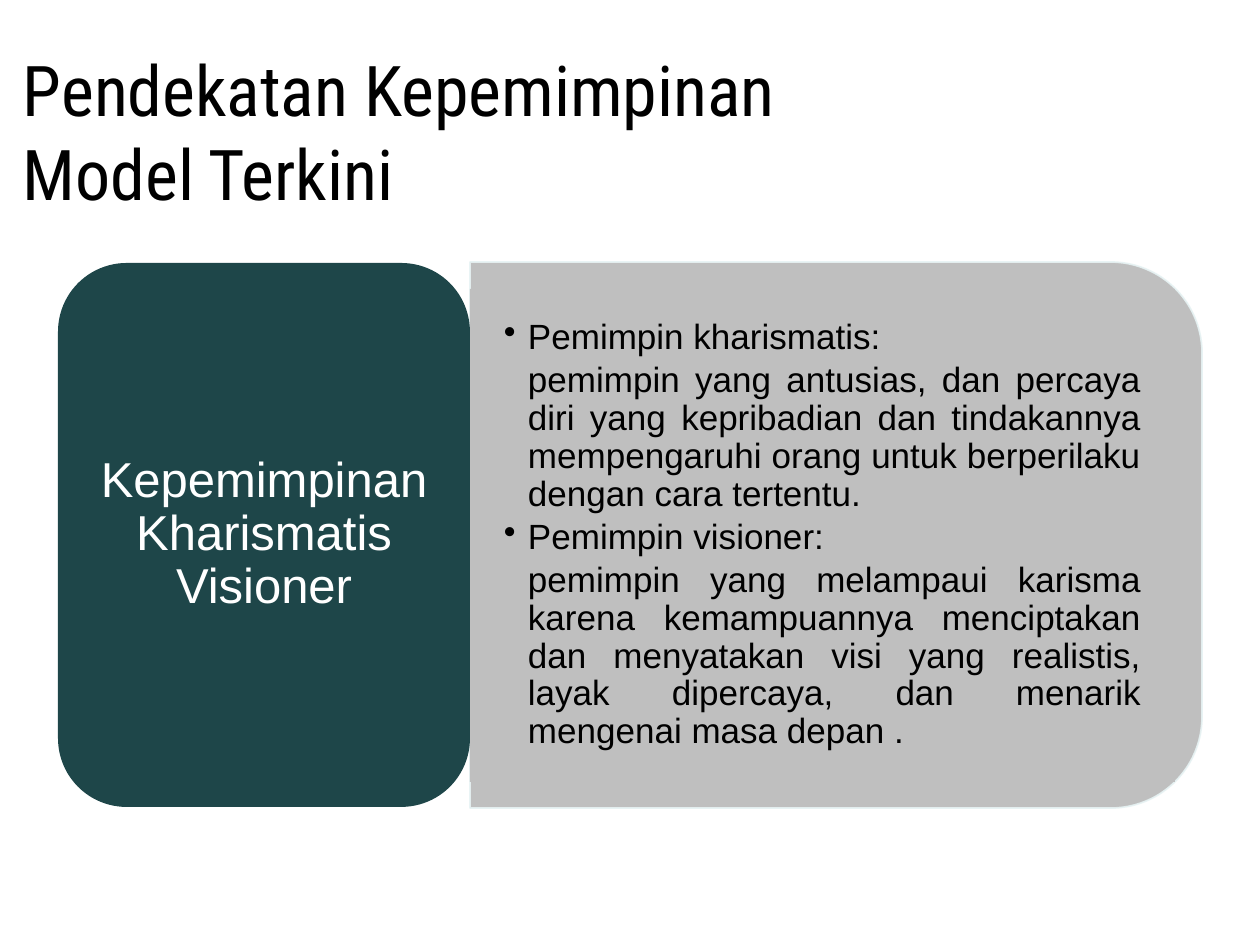
import pptx
import pptx.util
import pptx.dml.color
import pptx.enum.shapes
import pptx.enum.text
import pptx.oxml.ns
import lxml.etree

SHAPE = pptx.enum.shapes.MSO_SHAPE
ALIGN = pptx.enum.text.PP_ALIGN
MIDDLE = pptx.enum.text.MSO_ANCHOR.MIDDLE
TEAL, GREY, PALE, BLACK, WHITE = "1E4649", "BFBFBF", "E7F3F4", "000000", "FFFFFF"


def px(n):
    return pptx.util.Emu(n * 914400 // 126)


def rgb(value):
    return pptx.dml.color.RGBColor.from_string(value)


def sub(parent, tag, **attrs):
    return lxml.etree.SubElement(parent, pptx.oxml.ns.qn(tag), **attrs)


class Deck:
    body_font = "Arial"
    title_font = "Roboto Condensed"

    def __init__(self, prs):
        self.s = prs.slides.add_slide(prs.slide_layouts[6])

    def shape(self, kind, box, fill, line=None, rotation=0):
        sp = self.s.shapes.add_shape(kind, *map(px, box))
        sp.shadow.inherit = False
        sp.rotation = rotation
        sp.fill.solid()
        sp.fill.fore_color.rgb = rgb(fill)
        if line:
            sp.line.width = pptx.util.Pt(1)
            sp.line.color.rgb = rgb(line)
            color = sp.line.fill._xPr.find(".//" + pptx.oxml.ns.qn("a:srgbClr"))
            sub(color, "a:alpha", val="90000")
        else:
            sp.line.fill.background()
        return sp

    def frame(self, sp, x_inset, y_inset):
        tf = sp.text_frame
        tf.word_wrap = True
        tf.vertical_anchor = MIDDLE
        tf.margin_left = tf.margin_right = px(x_inset)
        tf.margin_top = tf.margin_bottom = px(y_inset)
        return tf

    def style(self, p, size, color, align, font=body_font):
        p.alignment = align
        p.font.size = pptx.util.Pt(size)
        p.font.name = font
        p.font.color.rgb = rgb(color)

    def title(self, box, text):
        sp = self.s.shapes.add_textbox(*map(px, box))
        tf = self.frame(sp, 13, 6)
        tf.text = text
        self.style(tf.paragraphs[0], 40, BLACK, ALIGN.LEFT, self.title_font)

    def label(self, box, fill, text):
        tf = self.frame(self.shape(SHAPE.RECTANGLE, box, fill), 10, 5)
        tf.text = text
        p = tf.paragraphs[0]
        p.line_spacing = 0.9
        self.style(p, 28, WHITE, ALIGN.CENTER)

    def definitions(self, box, fill, items):
        tf = self.frame(self.shape(SHAPE.RECTANGLE, box, fill), 34, 18)
        lines = [(text, i == 0) for item in items for i, text in enumerate(item)]
        for i, (text, bullet) in enumerate(lines):
            p = tf.add_paragraph() if i else tf.paragraphs[0]
            p.text = text
            p.line_spacing = 0.9
            p.space_after = pptx.util.Pt(3)
            pPr = p._p.get_or_add_pPr()
            pPr.set("marL", str(px(24)))
            pPr.set("indent", str(-px(24) if bullet else 0))
            if bullet:
                sub(pPr, "a:buChar", char="•")
            else:
                sub(pPr, "a:buNone")
            self.style(p, 20, BLACK, ALIGN.JUSTIFY)


def main():
    prs = pptx.Presentation()
    prs.slide_width, prs.slide_height = px(1260), px(945)
    deck = Deck(prs)
    deck.title((10, 63, 872, 136), "Pendekatan Kepemimpinan Model Terkini")
    deck.shape(SHAPE.ROUND_2_SAME_RECTANGLE, (563, 169, 546, 732), GREY, PALE, 90)
    deck.definitions((470, 289, 705, 493), GREY, [
        ("Pemimpin kharismatis:",
         "pemimpin yang antusias, dan percaya diri yang kepribadian dan tindakannya "
         "mempengaruhi orang untuk berperilaku dengan cara tertentu."),
        ("Pemimpin visioner:",
         "pemimpin yang melampaui karisma karena kemampuannya menciptakan dan menyatakan "
         "visi yang realistis, layak dipercaya, dan menarik mengenai masa depan ."),
    ])
    deck.shape(SHAPE.ROUNDED_RECTANGLE, (58, 263, 412, 544), TEAL)
    deck.label((78, 283, 372, 504), TEAL, "Kepemimpinan Kharismatis Visioner")
    prs.save("out.pptx")


if __name__ == "__main__":
    main()
